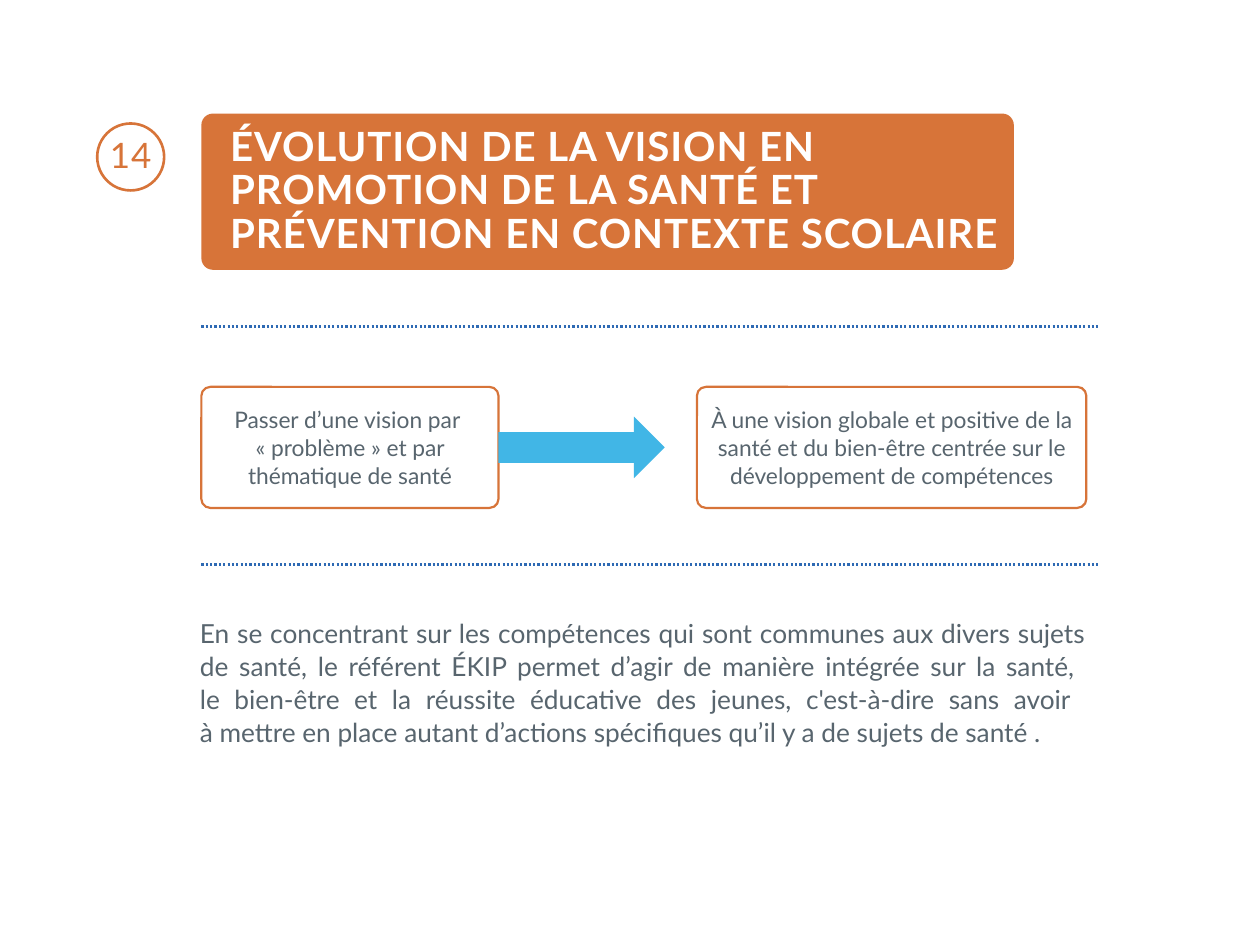
from collections import namedtuple
from dataclasses import dataclass

from lxml.etree import SubElement
from pptx import Presentation
from pptx.dml.color import RGBColor
from pptx.enum.dml import MSO_LINE
from pptx.enum.shapes import MSO_CONNECTOR, MSO_SHAPE
from pptx.enum.text import MSO_ANCHOR, MSO_AUTO_SIZE, PP_ALIGN
from pptx.oxml.ns import qn
from pptx.util import Cm, Pt

Box = namedtuple("Box", "left top width height")


@dataclass(frozen=True)
class Theme:
    font: str = "Lato"
    orange: RGBColor = RGBColor(0xD7, 0x74, 0x39)
    blue: RGBColor = RGBColor(0x41, 0xB6, 0xE6)
    rule: RGBColor = RGBColor(0x2E, 0x6A, 0xB4)
    ink: RGBColor = RGBColor(0x58, 0x65, 0x6E)
    white: RGBColor = RGBColor(0xFF, 0xFF, 0xFF)
    title_size: Pt = Pt(23)
    number_size: Pt = Pt(20)
    body_size: Pt = Pt(15)
    card_size: Pt = Pt(13)
    corner: float = 0.074


THEME = Theme()


def lengths(box):
    return [Cm(value) for value in box]


def add_panel(page, kind, box, fill=None, line=None, line_width=1.25):
    panel = page.shapes.add_shape(kind, *lengths(box))
    panel.shadow.inherit = False
    if kind == MSO_SHAPE.ROUNDED_RECTANGLE:
        panel.adjustments[0] = THEME.corner
    if fill is None:
        panel.fill.background()
    else:
        panel.fill.solid()
        panel.fill.fore_color.rgb = fill
    if line is None:
        panel.line.fill.background()
    else:
        panel.line.color.rgb = line
        panel.line.width = Pt(line_width)
    return panel


def write(frame, text, size, color, align, spacing, bold=False, tracking=0):
    para = frame.paragraphs[0]
    para.text = text
    para.alignment = align
    para.line_spacing = spacing
    para.space_before = Pt(0)
    font = para.font
    font.name, font.size, font.bold = THEME.font, size, bold
    font.color.rgb = color
    if tracking:
        for properties in para._p.iter(qn("a:defRPr")):
            properties.set("spc", str(tracking))


def set_insets(frame, horizontal, vertical):
    frame.margin_left = frame.margin_right = Cm(horizontal)
    frame.margin_top = frame.margin_bottom = Cm(vertical)


def add_title(page, box, text):
    banner = add_panel(page, MSO_SHAPE.ROUNDED_RECTANGLE, box, fill=THEME.orange)
    title = page.shapes.title
    title._element.addprevious(banner._element)
    indent = 0.33
    title.left, title.top, title.width, title.height = lengths(
        Box(box.left + indent, box.top, box.width - indent, box.height))
    frame = title.text_frame
    frame.word_wrap = True
    frame.auto_size = MSO_AUTO_SIZE.NONE
    frame.vertical_anchor = MSO_ANCHOR.MIDDLE
    set_insets(frame, 0.25, 0.13)
    write(frame, text, THEME.title_size, THEME.white, PP_ALIGN.LEFT, 0.9,
          bold=True, tracking=50)


def add_number(page, box, text):
    badge = add_panel(page, MSO_SHAPE.OVAL, box, line=THEME.orange, line_width=1.5)
    frame = badge.text_frame
    frame.word_wrap = False
    frame.vertical_anchor = MSO_ANCHOR.MIDDLE
    set_insets(frame, 0, 0)
    write(frame, text, THEME.number_size, THEME.orange, PP_ALIGN.CENTER, 0.9,
          tracking=50)


def add_card(page, box, text):
    card = add_panel(page, MSO_SHAPE.ROUNDED_RECTANGLE, box,
                     fill=THEME.white, line=THEME.orange)
    frame = card.text_frame
    frame.word_wrap = True
    frame.vertical_anchor = MSO_ANCHOR.MIDDLE
    set_insets(frame, 0.15, 0.13)
    write(frame, text, THEME.card_size, THEME.ink, PP_ALIGN.CENTER, Pt(16))


def add_flow(page, box, before, after):
    before_width, after_width = 5.99, 7.85
    arrow_width, arrow_height = 3.35, 1.24
    add_card(page, Box(box.left, box.top, before_width, box.height), before)
    add_card(page, Box(box.left + box.width - after_width, box.top,
                       after_width, box.height), after)
    add_panel(page, MSO_SHAPE.RIGHT_ARROW,
              Box(box.left + before_width,
                  box.top + (box.height - arrow_height) / 2,
                  arrow_width, arrow_height), fill=THEME.blue)


def add_divider(page, box):
    divider = page.shapes.add_connector(
        MSO_CONNECTOR.STRAIGHT, Cm(box.left), Cm(box.top),
        Cm(box.left + box.width), Cm(box.top))
    divider.line.color.rgb = THEME.rule
    divider.line.width = Pt(1.25)
    divider.line.dash_style = MSO_LINE.ROUND_DOT
    SubElement(divider._element.spPr, qn("a:effectLst"))


def add_body(page, box, text):
    body = page.shapes.add_textbox(*lengths(box))
    frame = body.text_frame
    frame.word_wrap = True
    set_insets(frame, 0.25, 0.13)
    write(frame, text, THEME.body_size, THEME.ink, PP_ALIGN.JUSTIFY, Pt(19))


def main():
    deck = Presentation()
    deck.slide_width, deck.slide_height = Cm(25.4), Cm(19.05)
    page = deck.slides.add_slide(deck.slide_layouts[5])
    left = 4.06

    add_title(page, Box(left, 2.29, 16.38, 3.15),
              "ÉVOLUTION DE LA VISION EN PROMOTION DE LA SANTÉ "
              "ET PRÉVENTION EN CONTEXTE SCOLAIRE")
    add_number(page, Box(1.96, 2.49, 1.35, 1.35), "14")
    add_flow(page, Box(left, 7.8, 17.84, 2.44),
             "Passer d’une vision par \n« problème » et par thématique de santé",
             "À une vision globale et positive de la santé et du bien-être "
             "centrée sur le développement de compétences")
    for top in (6.58, 11.38):
        add_divider(page, Box(left, top, 18.11, 0))
    add_body(page, Box(3.78, 12.27, 18.36, 3.33),
             "En se concentrant sur les compétences qui sont communes aux divers "
             "sujets de santé, le référent ÉKIP permet d’agir de manière intégrée "
             "sur la santé, \nle bien-être et la réussite éducative des jeunes, "
             "c'est-à-dire sans avoir \nà mettre en place autant d’actions "
             "spécifiques qu’il y a de sujets de santé .")

    deck.save("out.pptx")


if __name__ == "__main__":
    main()
